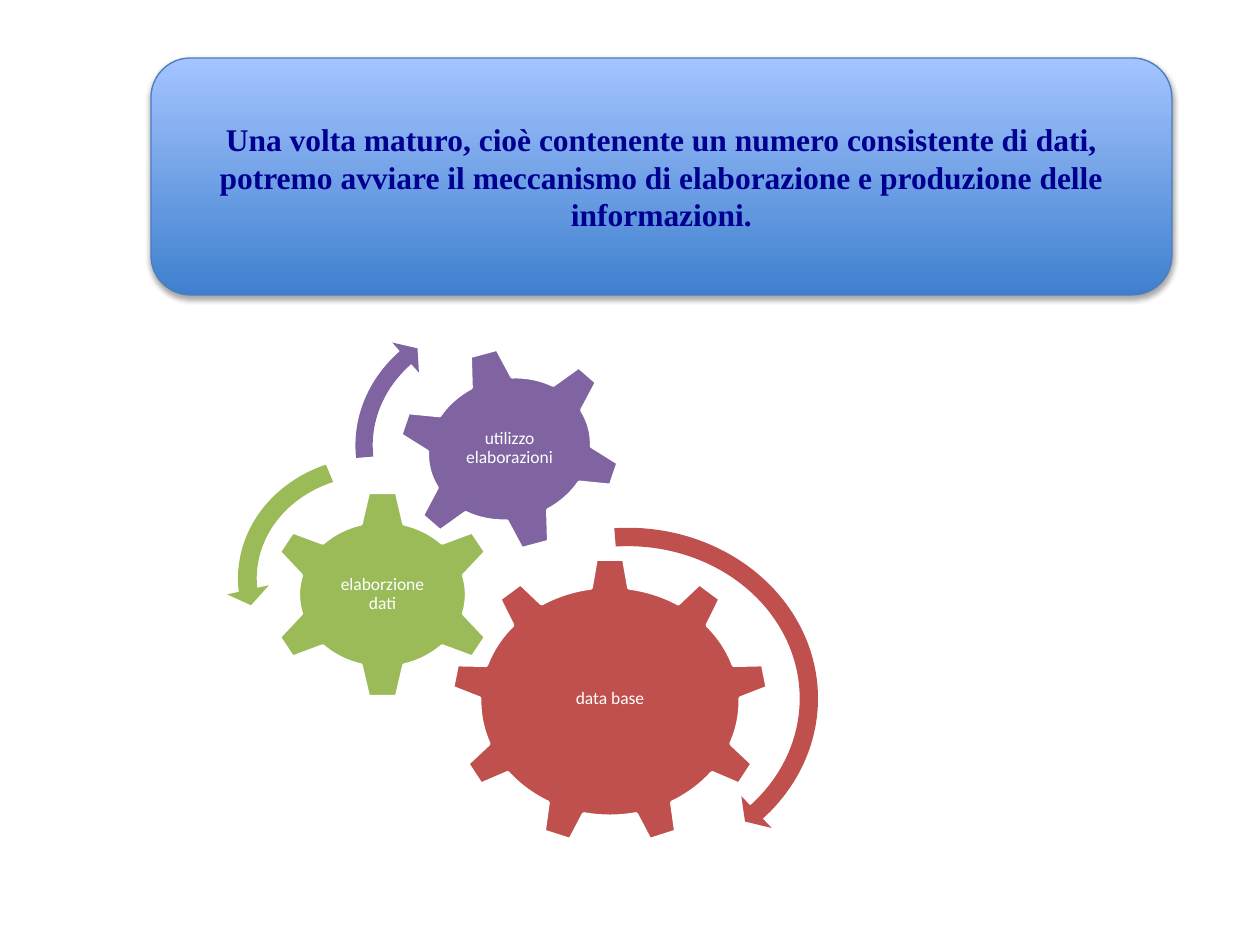
from dataclasses import dataclass

from lxml import etree
from pptx import Presentation
from pptx.dml.color import RGBColor
from pptx.enum import shapes, text
from pptx.oxml.ns import qn
from pptx.util import Pt

PX = 914400 / 126  # EMU in one px
MSO = shapes.MSO_SHAPE


@dataclass(frozen=True)
class Theme:
    banner_bottom: str = "3F80CE"
    banner_top: str = "A4C4FF"
    banner_line: str = "4B7EBC"
    banner_text: str = "000090"
    red: str = "C0504D"
    green: str = "9BBB59"
    purple: str = "8064A2"
    white: str = "FFFFFF"
    banner_font: str = "Times New Roman"
    gear_font: str = "Calibri"
    banner_size: int = 18
    gear_size: int = 10


T = Theme()

# label, gear preset, gear box, rotation, label box, colour
GEARS = [
    ("data base", MSO.GEAR_9, (451, 558, 318, 287), 0, (515, 625, 190, 147), T.red),
    ("elaborzione dati", MSO.GEAR_6, (267, 490, 231, 209), 0, (325, 543, 115, 103), T.green),
    ("utilizzo elaborazioni", MSO.GEAR_6, (396, 347, 227, 204), 345, (446, 391, 127, 115), T.purple),
]

# arrow preset, box, adjustments, colour
ARROWS = [
    (MSO.CIRCULAR_ARROW, (425, 515, 406, 367), (0.05, 2.99, 24.87, 159.26, 0.06), T.red),
    (MSO.LEFT_CIRCULAR_ARROW, (226, 445, 295, 267), (0.07, 4.3, 104.89, 148.38, 0.08), T.green),
    (MSO.CIRCULAR_ARROW, (344, 302, 319, 287), (0.06, 3.94, 133.14, 105.08, 0.07), T.purple),
]


def px(n):
    return round(n * PX)


def rgb(code):
    return RGBColor.from_string(code)


def add_shape(parent, preset, box, fill=None, line=None, width=1):
    sp = parent.add_shape(preset, *map(px, box))
    sp.shadow.inherit = False
    if fill:
        sp.fill.solid()
        sp.fill.fore_color.rgb = rgb(fill)
    if line:
        sp.line.color.rgb = rgb(line)
        sp.line.width = Pt(width)
    else:
        sp.line.fill.background()
    return sp


def write(sp, words, font, size, color, bold=False):
    tf = sp.text_frame
    tf.word_wrap = True
    tf.vertical_anchor = text.MSO_ANCHOR.MIDDLE
    p = tf.paragraphs[0]
    p.text = words
    p.alignment = text.PP_ALIGN.CENTER
    p.font.name, p.font.size, p.font.bold = font, Pt(size), bold
    p.font.color.rgb = rgb(color)
    return tf


def add_shadow(sp):
    effects = sp._element.spPr.find(qn("a:effectLst"))
    shadow = etree.SubElement(effects, qn("a:outerShdw"), blurRad="40000",
                              dist="23000", dir="5400000", rotWithShape="0")
    color = etree.SubElement(shadow, qn("a:srgbClr"), val="000000")
    etree.SubElement(color, qn("a:alpha"), val="35000")


def add_banner(parent, words):
    sp = add_shape(parent, MSO.ROUNDED_RECTANGLE, (151, 58, 1021, 237),
                   line=T.banner_line, width=0.75)
    sp.fill.gradient()
    sp.fill.gradient_angle = 90
    stops = zip(sp.fill.gradient_stops, (0, 1), (T.banner_bottom, T.banner_top))
    for stop, position, color in stops:
        stop.position = position
        stop.color.rgb = rgb(color)
    add_shadow(sp)
    write(sp, words, T.banner_font, T.banner_size, T.banner_text, bold=True)


def add_gear(parent, label, preset, box, rotation, label_box, color):
    add_shape(parent, preset, box, color, T.white, 2).rotation = rotation
    tb = parent.add_textbox(*map(px, label_box))
    tf = write(tb, label, T.gear_font, T.gear_size, T.white)
    tf.margin_left = tf.margin_right = tf.margin_top = tf.margin_bottom = px(1)
    tf.paragraphs[0].line_spacing = 0.9


def add_arrow(parent, preset, box, adjustments, color):
    sp = add_shape(parent, preset, box, color)
    for i, value in enumerate(adjustments):
        sp.adjustments[i] = value


def main():
    prs = Presentation()
    prs.slide_width, prs.slide_height = px(1260), px(945)
    s = prs.slides.add_slide(prs.slide_layouts[6])

    # Statement at the top
    add_banner(s.shapes, "Una volta maturo, cioè contenente un numero consistente di dati, "
               "potremo avviare il meccanismo di elaborazione e produzione delle informazioni.")

    # Gears with their turning arrows
    mechanism = s.shapes.add_group_shape().shapes
    for gear in GEARS:
        add_gear(mechanism, *gear)
    for arrow in ARROWS:
        add_arrow(mechanism, *arrow)

    prs.save("out.pptx")


if __name__ == "__main__":
    main()
